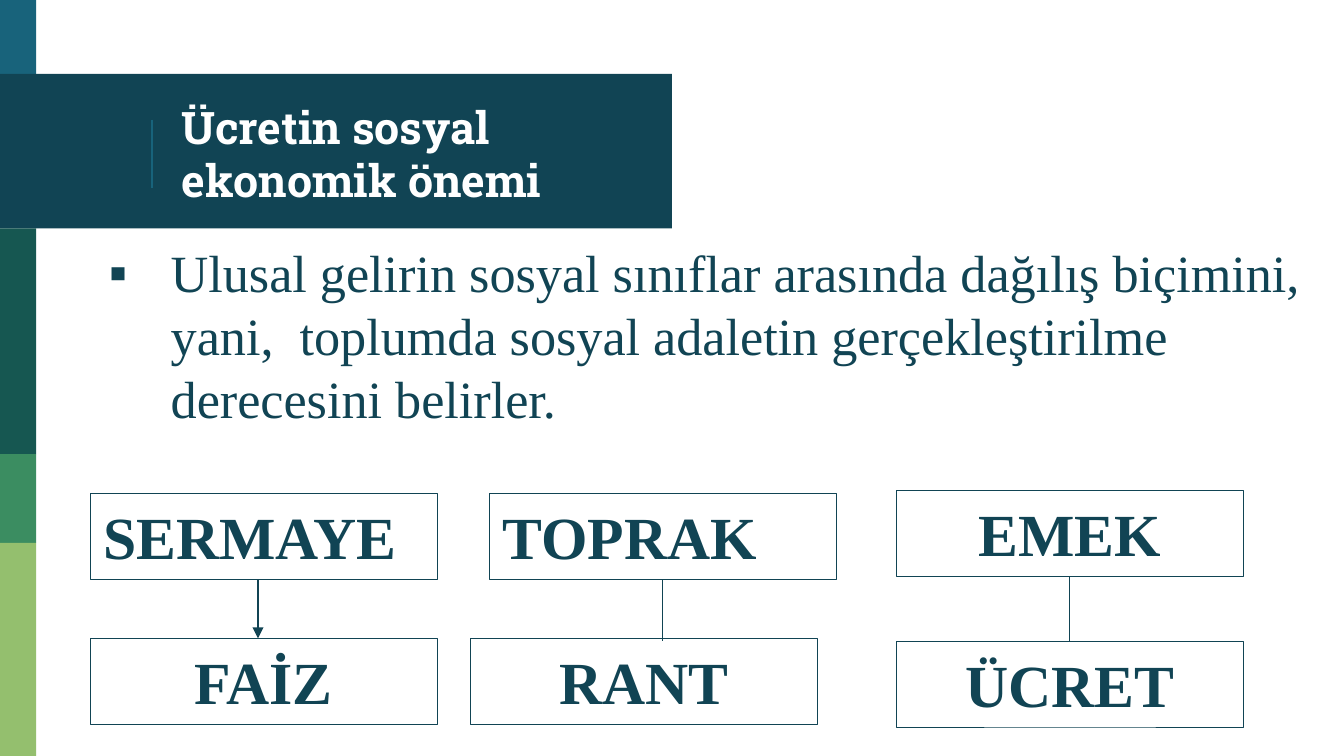
from lxml.etree import SubElement
from pptx import Presentation
from pptx.dml.color import RGBColor
from pptx.enum.shapes import MSO_CONNECTOR as Link, MSO_SHAPE as Preset
from pptx.enum.text import MSO_ANCHOR as Anchor, MSO_AUTO_SIZE as Fit, PP_ALIGN as Align
from pptx.oxml.ns import qn
from pptx.util import Inches, Pt

COLORS = {"ink": "114454", "blue": "18637B", "pine": "165751",
          "green": "3B8D61", "lime": "94BF6E", "white": "FFFFFF"}
WIDTH = 10
HEIGHT = WIDTH * 9 / 16
STRIPE = 0.27
BOX_W, BOX_H = 2.58, 0.64
LEFT, MIDDLE, RIGHT = 0.67, 3.64, 6.67
UPPER, LOWER = 3.67, 4.75
BOTTOM_SIDE, TOP_SIDE = 2, 0


def color(name):
    return RGBColor.from_string(COLORS[name])


def apply(target, values):
    for name, value in values.items():
        setattr(target, name, value)


def place(part, left, top, width, height):
    apply(part, {"left": Inches(left), "top": Inches(top),
                 "width": Inches(width), "height": Inches(height)})


def write(part, text, ink, font, frame, paragraph):
    apply(part.text_frame, {"word_wrap": True, "auto_size": Fit.NONE, **frame})
    line = part.text_frame.paragraphs[0]
    apply(line, paragraph)
    run = line.add_run()
    run.text = text
    apply(run.font, font)
    run.font.color.rgb = color(ink)
    return line


def add_band(slide, top, bottom, width, fill):
    band = slide.shapes.add_shape(Preset.RECTANGLE, 0, Inches(top),
                                  Inches(width), Inches(bottom - top))
    band.shadow.inherit = False
    band.fill.solid()
    band.fill.fore_color.rgb = color(fill)
    band.line.fill.background()


def add_factor(slide, left, top, text, align=Align.CENTER):
    factor = slide.shapes.add_shape(Preset.RECTANGLE, Inches(left), Inches(top),
                                    Inches(BOX_W), Inches(BOX_H))
    factor.shadow.inherit = False
    factor.fill.background()
    factor.line.color.rgb = color("ink")
    factor.line.width = Pt(0.25)
    write(factor, text, "ink",
          {"name": "Times New Roman", "size": Pt(32), "bold": True},
          {"vertical_anchor": Anchor.TOP, "margin_top": Inches(0.05)},
          {"alignment": align})
    return factor


def add_line(slide, x, top, bottom, ink="ink", arrow=False):
    line = slide.shapes.add_connector(Link.STRAIGHT, Inches(x), Inches(top),
                                      Inches(x), Inches(bottom))
    line.line.color.rgb = color(ink)
    line.line.width = Pt(0.75)
    if arrow:
        SubElement(line.element.spPr.find(qn("a:ln")), qn("a:tailEnd"), type="triangle")
    SubElement(line.element.spPr, qn("a:effectLst"))
    return line


def add_bullet(line, ink, left, hanging):
    props = line._p.get_or_add_pPr()
    props.set("marL", str(Inches(left)))
    props.set("indent", str(Inches(hanging)))
    tint = SubElement(props, qn("a:buClr"))
    SubElement(tint, qn("a:srgbClr"), val=COLORS[ink])
    SubElement(props, qn("a:buChar"), char="▪")


def bring_forward(part):
    part.element.getparent().append(part.element)


def add_frame(slide):
    for top, bottom, width, fill in [
        (0, 0.58, STRIPE, "blue"),
        (0.55, 1.7, WIDTH / 2, "ink"),
        (1.7, 3.38, STRIPE, "pine"),
        (3.38, 4.04, STRIPE, "green"),
        (4.04, HEIGHT, STRIPE, "lime"),
    ]:
        add_band(slide, top, bottom, width, fill)
    add_line(slide, 1.13, 0.89, 1.4, "blue")


def add_text(slide):
    title, body = slide.shapes.title, slide.placeholders[1]
    insets = {f"margin_{side}": Inches(0.1) for side in ("left", "top", "right", "bottom")}
    place(title, 1.25, 0.58, 3.51, 1.12)
    write(title, "Ücretin sosyal ekonomik önemi", "white",
          {"name": "Roboto Slab", "size": Pt(24), "bold": True},
          {**insets, "vertical_anchor": Anchor.MIDDLE},
          {"alignment": Align.LEFT, "line_spacing": 1.0})
    place(body, LEFT, 1.69, WIDTH - LEFT, HEIGHT * 0.6)
    statement = write(
        body,
        "Ulusal gelirin sosyal sınıflar arasında dağılış biçimini, yani,  toplumda "
        "sosyal adaletin gerçekleştirilme derecesini belirler.",
        "ink", {"name": "Times New Roman", "size": Pt(28)},
        {**insets, "vertical_anchor": Anchor.TOP},
        {"space_before": Pt(6), "line_spacing": 1.0})
    add_bullet(statement, "ink", 0.5, -0.46)
    for part in (title, body):
        bring_forward(part)


def add_factors(slide):
    add_factor(slide, LEFT, UPPER, "SERMAYE", Align.LEFT)
    land = add_factor(slide, MIDDLE, UPPER, "TOPRAK", Align.LEFT)
    labour = add_factor(slide, RIGHT, UPPER - 0.02, "EMEK")
    add_factor(slide, LEFT, LOWER, "FAİZ")
    add_factor(slide, 3.5, LOWER, "RANT")
    wage = add_factor(slide, RIGHT, LOWER + 0.02, "ÜCRET")

    add_line(slide, 1.92, UPPER + BOX_H, LOWER, arrow=True)
    rent_link = add_line(slide, MIDDLE + BOX_W / 2, UPPER + BOX_H, LOWER + 0.02)
    rent_link.begin_connect(land, BOTTOM_SIDE)
    wage_link = add_line(slide, RIGHT + BOX_W / 2, UPPER + BOX_H, LOWER + 0.02)
    wage_link.begin_connect(labour, BOTTOM_SIDE)
    wage_link.end_connect(wage, TOP_SIDE)


def main():
    deck = Presentation()
    apply(deck, {"slide_width": Inches(WIDTH), "slide_height": Inches(HEIGHT)})
    slide = deck.slides.add_slide(deck.slide_layouts[1])
    add_frame(slide)
    add_text(slide)
    add_factors(slide)
    deck.save("out.pptx")


if __name__ == "__main__":
    main()
